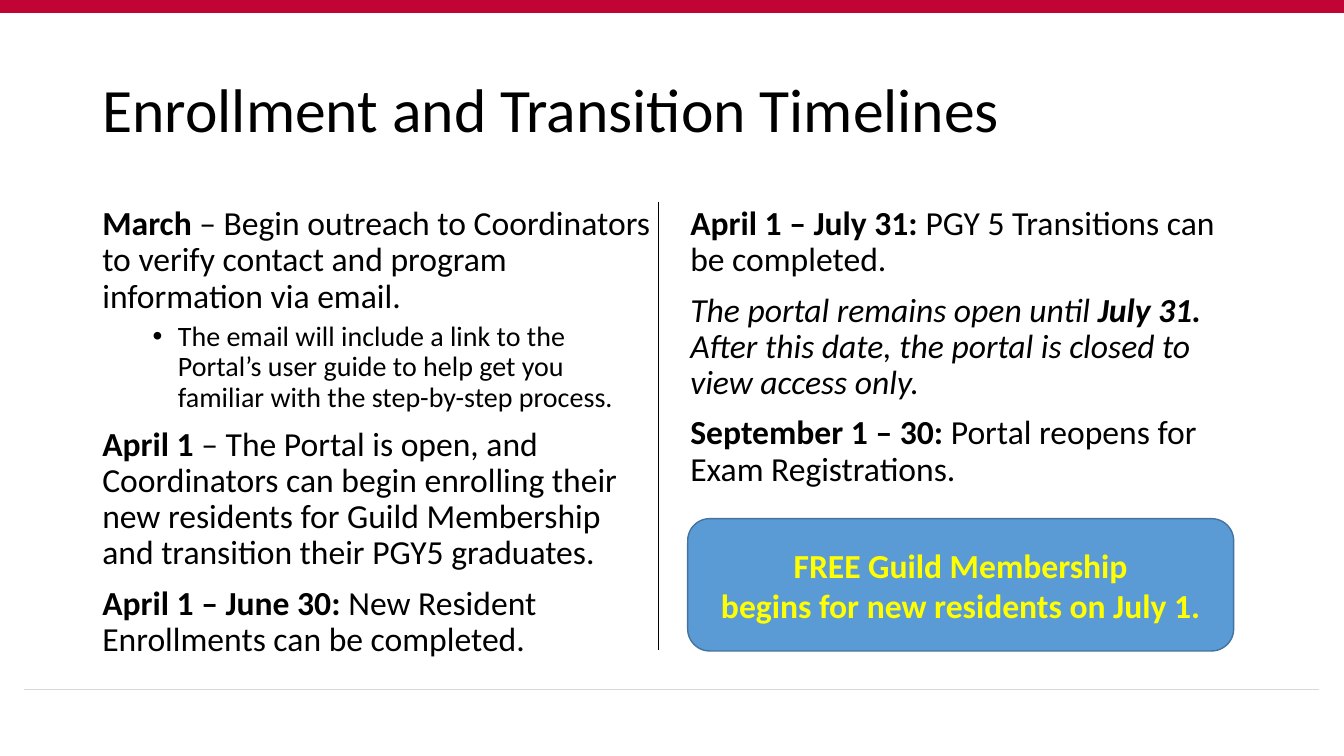
"""Build the enrollment and transition timelines slide."""
from lxml.etree import SubElement
from pptx import Presentation
from pptx.dml.color import RGBColor
from pptx.enum.shapes import MSO_CONNECTOR, MSO_SHAPE
from pptx.enum.text import MSO_ANCHOR, MSO_AUTO_SIZE, PP_ALIGN
from pptx.oxml.ns import qn
from pptx.util import Pt

PX = 9525
THEME = {
    "font": "Calibri",
    "title": 44, "body": 24, "detail": 20,
    "text": "000000", "banner": "C00433", "footer": "D9D9D9",
    "callout": "5B9BD5", "callout_edge": "43739E", "callout_text": "FFFF00",
}


def style_font(font, size, color="text", bold=False, italic=False):
    values = {"name": THEME["font"], "size": Pt(THEME[size]), "bold": bold, "italic": italic}
    for key, value in values.items():
        setattr(font, key, value)
    font.color.rgb = RGBColor.from_string(THEME[color])


def set_frame(frame, anchor):
    values = {"word_wrap": True, "auto_size": MSO_AUTO_SIZE.NONE, "vertical_anchor": anchor}
    for key, value in values.items():
        setattr(frame, key, value)


prs = Presentation()
prs.slide_width, prs.slide_height = 1280 * PX, 720 * PX
slide = prs.slides.add_slide(prs.slide_layouts[5])

RULES = [
    (0, 6, 1280, 6, "banner", 9),
    (23, 657, 1256, 657, "footer", 0.5),
    (627, 192, 627, 619, "text", 1),
]
for x1, y1, x2, y2, color, weight in RULES:
    rule = slide.shapes.add_connector(
        MSO_CONNECTOR.STRAIGHT, x1 * PX, y1 * PX, x2 * PX, y2 * PX)
    rule.line.color.rgb = RGBColor.from_string(THEME[color])
    rule.line.width = Pt(weight)
    SubElement(rule._element.spPr, qn("a:effectLst"))

title = slide.shapes.title
title.left, title.top, title.width, title.height = 88 * PX, 38 * PX, 1104 * PX, 139 * PX
set_frame(title.text_frame, MSO_ANCHOR.MIDDLE)
heading = title.text_frame.paragraphs[0]
heading.text = "Enrollment and Transition Timelines"
heading.alignment = PP_ALIGN.LEFT
heading.line_spacing = 0.9
style_font(heading.runs[0].font, "title")

COLUMNS = [
    (88, 457, [
        ("body", [("March ", "b"), ("– Begin outreach to Coordinators to verify contact "
                                    "and program information via email.", "")]),
        ("detail", [("The email will include a link to the Portal’s user guide to help "
                     "get you familiar with the step-by-step process.", "")]),
        ("body", [("April 1", "b"), (" – The Portal is open, and Coordinators can begin "
                                     "enrolling their new residents for Guild Membership "
                                     "and transition their PGY5 graduates.", "")]),
        ("body", [("April 1 – June 30:", "b"),
                  (" New Resident Enrollments can be completed.", "")]),
    ]),
    (648, 324, [
        ("body", [("April 1 – July 31:", "b"), (" PGY 5 Transitions can be completed.", "")]),
        ("body", [("The portal remains open until ", "i"), ("July 31.", "bi"),
                  (" After this date, the portal is closed to view access only.", "i")]),
        ("body", [("September 1 – 30:", "b"),
                  (" Portal reopens for Exam Registrations.", "")]),
    ]),
]
for left, height, entries in COLUMNS:
    column = slide.shapes.add_textbox(left * PX, 192 * PX, 544 * PX, height * PX).text_frame
    set_frame(column, MSO_ANCHOR.TOP)
    for index, (level, runs) in enumerate(entries):
        entry = column.add_paragraph() if index else column.paragraphs[0]
        entry.line_spacing = 0.9
        if index:
            entry.space_before = Pt(5 if level == "detail" else 10)
        if level == "detail":
            entry.level = 1
            properties = entry._p.get_or_add_pPr()
            properties.set("marL", str(72 * PX))
            properties.set("indent", str(-24 * PX))
            SubElement(properties, qn("a:buFont"), typeface="Arial")
            SubElement(properties, qn("a:buChar"), char="•")
        for text, marks in runs:
            run = entry.add_run()
            run.text = text
            style_font(run.font, level, bold="b" in marks, italic="i" in marks)

callout = slide.shapes.add_shape(
    MSO_SHAPE.ROUNDED_RECTANGLE, 655 * PX, 494 * PX, 520 * PX, 126 * PX)
callout.shadow.inherit = False
callout.fill.solid()
callout.fill.fore_color.rgb = RGBColor.from_string(THEME["callout"])
callout.line.color.rgb = RGBColor.from_string(THEME["callout_edge"])
callout.line.width = Pt(1)
set_frame(callout.text_frame, MSO_ANCHOR.MIDDLE)
offer = callout.text_frame.paragraphs[0]
offer.alignment = PP_ALIGN.CENTER
for index, text in enumerate(["FREE Guild Membership", "begins for new residents on July 1."]):
    if index:
        offer.add_line_break()
    run = offer.add_run()
    run.text = text
    style_font(run.font, "body", "callout_text", bold=True)

prs.save("out.pptx")
